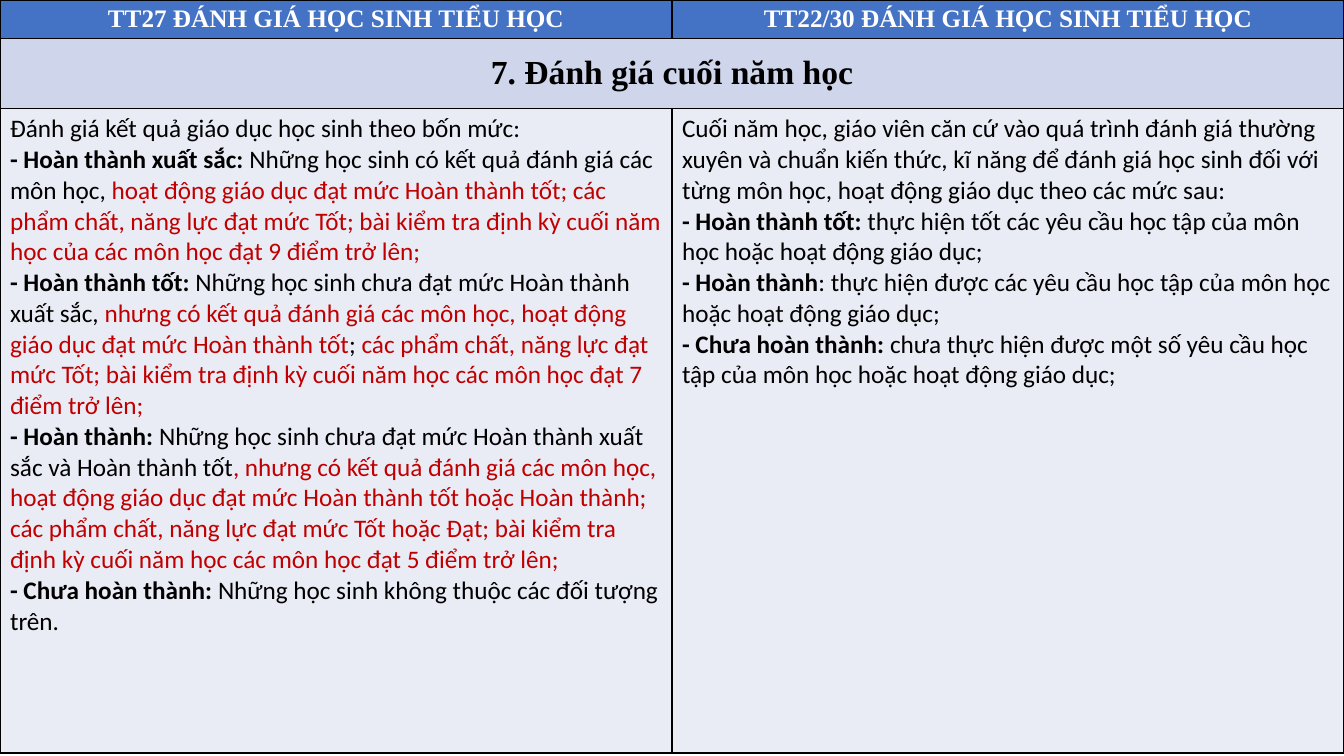
from lxml import etree
from pptx import Presentation
from pptx.dml.color import RGBColor
from pptx.enum.text import MSO_ANCHOR, PP_ALIGN
from pptx.oxml.ns import qn
from pptx.util import Inches, Pt

CENTER, LEFT = PP_ALIGN.CENTER, PP_ALIGN.LEFT
MIDDLE, TOP = MSO_ANCHOR.MIDDLE, MSO_ANCHOR.TOP
SERIF, SANS = "Times New Roman", "Calibri"
COLORS = {
    "header": "4472C4", "section": "CFD5EA", "body": "E9EBF5",
    "white": "FFFFFF", "black": "000000", "red": "C00000",
}
STYLES = {
    "title": (SERIF, 18, True, "white"),
    "heading": (SERIF, 24, True, "black"),
    "text": (SANS, 18, False, "black"),
    "bold": (SANS, 18, True, "black"),
    "red": (SANS, 18, False, "red"),
}
ROW_HEIGHTS = [0.38, 0.7, 6.39]
ROW_FORMATS = [
    ("header", CENTER, MIDDLE, 0.04),
    ("section", CENTER, MIDDLE, 0.05),
    ("body", LEFT, TOP, 0.05),
]

new_rules = [
    [("text", "Đánh giá kết quả giáo dục học sinh theo bốn mức:")],
    [("bold", "- Hoàn thành xuất sắc: "),
     ("text", "Những học sinh có kết quả đánh giá các môn học, "),
     ("red", "hoạt động giáo dục đạt mức Hoàn thành tốt; các phẩm chất, năng lực đạt mức Tốt; "
             "bài kiểm tra định kỳ cuối năm học của các môn học đạt 9 điểm trở lên;")],
    [("bold", "- Hoàn thành tốt: "),
     ("text", "Những học sinh chưa đạt mức Hoàn thành xuất sắc, "),
     ("red", "nhưng có kết quả đánh giá các môn học, hoạt động giáo dục đạt mức Hoàn thành tốt"),
     ("text", "; "),
     ("red", "các phẩm chất, năng lực đạt mức Tốt; "
             "bài kiểm tra định kỳ cuối năm học các môn học đạt 7 điểm trở lên;")],
    [("bold", "- Hoàn thành: "),
     ("text", "Những học sinh chưa đạt mức Hoàn thành xuất sắc và Hoàn thành tốt"),
     ("red", ", nhưng có kết quả đánh giá các môn học, hoạt động giáo dục đạt mức Hoàn thành tốt "
             "hoặc Hoàn thành; các phẩm chất, năng lực đạt mức Tốt hoặc Đạt; "
             "bài kiểm tra định kỳ cuối năm học các môn học đạt 5 điểm trở lên;")],
    [("bold", "- Chưa hoàn thành: "),
     ("text", "Những học sinh không thuộc các đối tượng trên.")],
]
old_rules = [
    [("text", "Cuối năm học, giáo viên căn cứ vào quá trình đánh giá thường xuyên và chuẩn kiến thức, "
              "kĩ năng để đánh giá học sinh đối với từng môn học, hoạt động giáo dục theo các mức sau:")],
    [("bold", "- Hoàn thành tốt: "),
     ("text", "thực hiện tốt các yêu cầu học tập của môn học hoặc hoạt động giáo dục;")],
    [("bold", "- Hoàn thành"),
     ("text", ": thực hiện được các yêu cầu học tập của môn học hoặc hoạt động giáo dục;")],
    [("bold", "- Chưa hoàn thành: "),
     ("text", "chưa thực hiện được một số yêu cầu học tập của môn học hoặc hoạt động giáo dục;")],
]
rows = [
    [[[("title", "TT27 ĐÁNH GIÁ HỌC SINH TIỂU HỌC")]],
     [[("title", "TT22/30 ĐÁNH GIÁ HỌC SINH TIỂU HỌC")]]],
    [[[("heading", "7. Đánh giá cuối năm học")]], []],
    [new_rules, old_rules],
]


def add_borders(cell):
    tcPr = cell._tc.get_or_add_tcPr()
    for side in ("a:lnL", "a:lnR", "a:lnT", "a:lnB"):
        ln = etree.SubElement(tcPr, qn(side), w=str(Pt(1)))
        fill = etree.SubElement(ln, qn("a:solidFill"))
        etree.SubElement(fill, qn("a:srgbClr"), val=COLORS["black"])


def fill_text(tf, paragraphs, align):
    for i, runs in enumerate(paragraphs):
        p = tf.add_paragraph() if i else tf.paragraphs[0]
        p.alignment = align
        for style, text in runs:
            font, size, bold, color = STYLES[style]
            r = p.add_run()
            r.text = text
            r.font.name = font
            r.font.size = Pt(size)
            r.font.bold = bold
            r.font.color.rgb = RGBColor.from_string(COLORS[color])


prs = Presentation()
prs.slide_width, prs.slide_height = Inches(13.33), Inches(7.5)
s = prs.slides.add_slide(prs.slide_layouts[6])

table = s.shapes.add_table(len(rows), 2, 0, 0, prs.slide_width, Inches(sum(ROW_HEIGHTS))).table
for row, height in zip(table.rows, ROW_HEIGHTS):
    row.height = Inches(height)
table.cell(1, 0).merge(table.cell(1, 1))

for r_index, (fill, align, anchor, margin) in enumerate(ROW_FORMATS):
    for c_index, paragraphs in enumerate(rows[r_index]):
        cell = table.cell(r_index, c_index)
        add_borders(cell)
        cell.fill.solid()
        cell.fill.fore_color.rgb = RGBColor.from_string(COLORS[fill])
        cell.vertical_anchor = anchor
        cell.margin_top = cell.margin_bottom = Inches(margin)
        fill_text(cell.text_frame, paragraphs, align)

prs.save("out.pptx")
